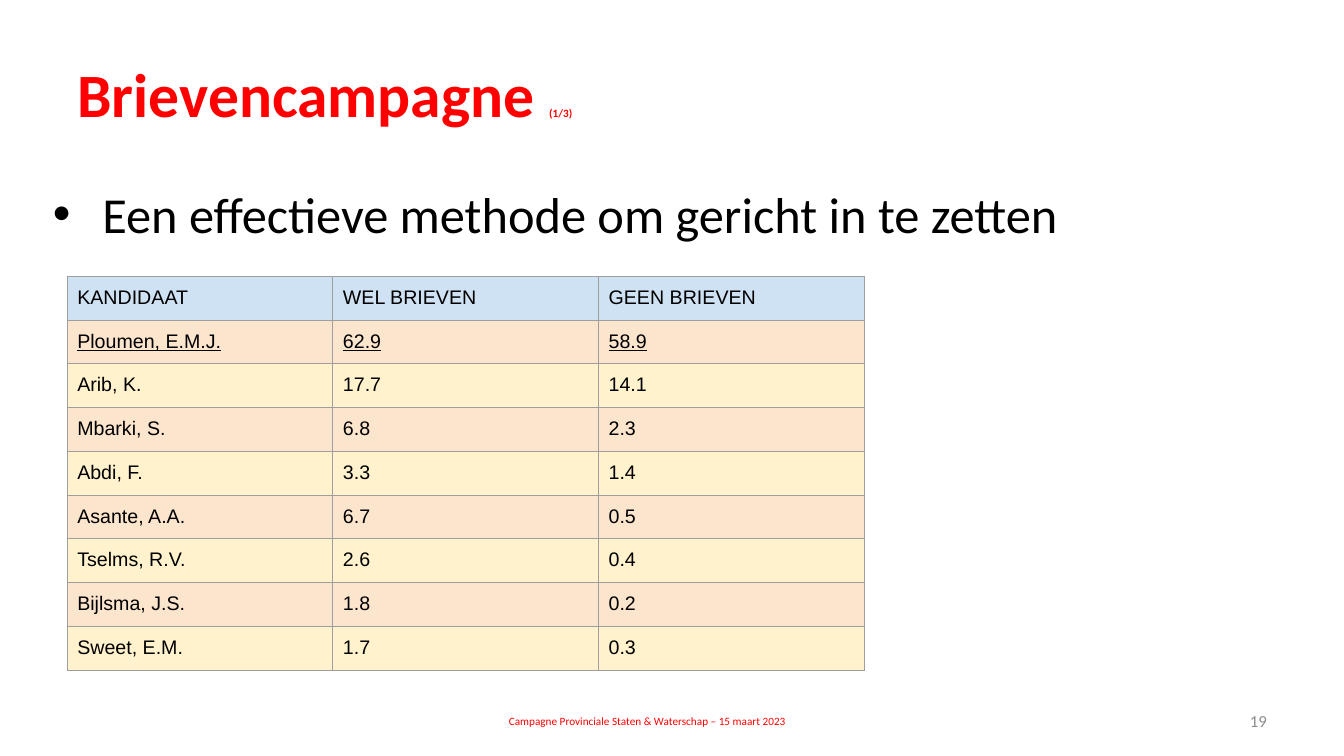
from dataclasses import dataclass

from lxml.etree import SubElement
from pptx import Presentation
from pptx.dml.color import RGBColor
from pptx.enum.text import MSO_ANCHOR as Anchor, MSO_AUTO_SIZE as AutoSize, PP_ALIGN as Align
from pptx.oxml.ns import qn
from pptx.util import Pt

TITLE, PART = "Brievencampagne ", "(1/3)"
BULLET = "Een effectieve methode om gericht in te zetten"
FOOTER = "Campagne Provinciale Staten & Waterschap – 15 maart 2023"
SLIDE_NUMBER = "19"
RESULTS = [
    ("KANDIDAAT", "WEL BRIEVEN", "GEEN BRIEVEN"),
    ("Ploumen, E.M.J.", "62.9", "58.9"),
    ("Arib, K.", "17.7", "14.1"),
    ("Mbarki, S.", "6.8", "2.3"),
    ("Abdi, F.", "3.3", "1.4"),
    ("Asante, A.A.", "6.7", "0.5"),
    ("Tselms, R.V.", "2.6", "0.4"),
    ("Bijlsma, J.S.", "1.8", "0.2"),
    ("Sweet, E.M.", "1.7", "0.3"),
]
UNDERLINED_ROW = 1


@dataclass(frozen=True)
class Theme:
    heading_font: str = "Calibri"
    table_font: str = "Arial"
    red: str = "FF0000"
    black: str = "000000"
    gray: str = "8C8C8C"
    border: str = "9E9E9E"
    header_fill: str = "CFE2F3"
    row_fills: tuple = ("FCE5CD", "FFF2CC")
    title_size: int = 44
    bullet_size: int = 36
    table_size: int = 14
    number_size: int = 12
    small_size: int = 8


THEME = Theme()
SIDE_MARGIN = 48
COLUMN_WIDTH, ROW_HEIGHT = 189.8, 30.8
CELL_MARGIN = 7.2
BULLET_INDENT = 35.5


def format_run(run, size, color, font=THEME.heading_font, bold=False, underline=False):
    run.font.name = font
    run.font.size = Pt(size)
    run.font.bold = bold
    run.font.underline = underline
    run.font.color.rgb = RGBColor.from_string(color)


def place(shape, left, top, width, height):
    shape.left, shape.top = Pt(left), Pt(top)
    shape.width, shape.height = Pt(width), Pt(height)


def add_title(slide):
    title = slide.shapes.title
    place(title, SIDE_MARGIN, 21.6, 864, 90)
    frame = title.text_frame
    frame.auto_size = AutoSize.NONE
    frame.vertical_anchor = Anchor.MIDDLE
    paragraph = frame.paragraphs[0]
    paragraph.alignment = Align.LEFT
    for text, size in ((TITLE, THEME.title_size), (PART, THEME.small_size)):
        run = paragraph.add_run()
        run.text = text
        format_run(run, size, THEME.red, bold=True)


def add_bullet(slide):
    body = slide.placeholders[1]
    place(body, 30.5, 127, 864, 375)
    frame = body.text_frame
    frame.auto_size = AutoSize.NONE
    frame.text = BULLET
    paragraph = frame.paragraphs[0]
    paragraph.space_before = Pt(0)
    properties = paragraph._p.get_or_add_pPr()
    properties.set("marL", str(Pt(BULLET_INDENT)))
    properties.set("indent", str(-Pt(BULLET_INDENT)))
    SubElement(properties, qn("a:buFont"), typeface="Arial")
    SubElement(properties, qn("a:buChar"), char="•")
    format_run(paragraph.runs[0], THEME.bullet_size, THEME.black)


def add_label(slide, text, left, width, alignment, size, color):
    box = slide.shapes.add_textbox(Pt(left), Pt(500.5), Pt(width), Pt(28.8))
    frame = box.text_frame
    frame.word_wrap = True
    frame.vertical_anchor = Anchor.MIDDLE
    frame.text = text
    paragraph = frame.paragraphs[0]
    paragraph.alignment = alignment
    format_run(paragraph.runs[0], size, color)


def add_borders(cell):
    """Draw all four cell borders; they must precede the fill in the XML."""
    properties = cell._tc.get_or_add_tcPr()
    for side in ("a:lnL", "a:lnR", "a:lnT", "a:lnB"):
        line = SubElement(properties, qn(side), w=str(Pt(0.75)))
        fill = SubElement(line, qn("a:solidFill"))
        SubElement(fill, qn("a:srgbClr"), val=THEME.border)


def add_results(slide):
    rows, columns = len(RESULTS), len(RESULTS[0])
    table = slide.shapes.add_table(
        rows, columns, Pt(SIDE_MARGIN), Pt(197.5),
        Pt(columns * COLUMN_WIDTH), Pt(rows * ROW_HEIGHT)).table
    table.first_row = table.horz_banding = False
    for column in table.columns:
        column.width = Pt(COLUMN_WIDTH)
    for index, values in enumerate(RESULTS):
        table.rows[index].height = Pt(ROW_HEIGHT)
        color = THEME.row_fills[(index - 1) % 2] if index else THEME.header_fill
        for column, value in enumerate(values):
            cell = table.cell(index, column)
            add_borders(cell)
            cell.fill.solid()
            cell.fill.fore_color.rgb = RGBColor.from_string(color)
            cell.margin_left = cell.margin_right = Pt(CELL_MARGIN)
            cell.margin_top = cell.margin_bottom = Pt(CELL_MARGIN)
            cell.text_frame.text = value
            format_run(cell.text_frame.paragraphs[0].runs[0], THEME.table_size, THEME.black,
                       THEME.table_font, underline=index == UNDERLINED_ROW)


def main():
    presentation = Presentation()
    presentation.slide_width, presentation.slide_height = Pt(960), Pt(540)
    slide = presentation.slides.add_slide(presentation.slide_layouts[1])
    add_title(slide)
    add_bullet(slide)
    add_label(slide, FOOTER, 293, 339, Align.CENTER, THEME.small_size, THEME.red)
    add_label(slide, SLIDE_NUMBER, 688, 224, Align.RIGHT, THEME.number_size, THEME.gray)
    add_results(slide)
    presentation.save("out.pptx")


if __name__ == "__main__":
    main()
